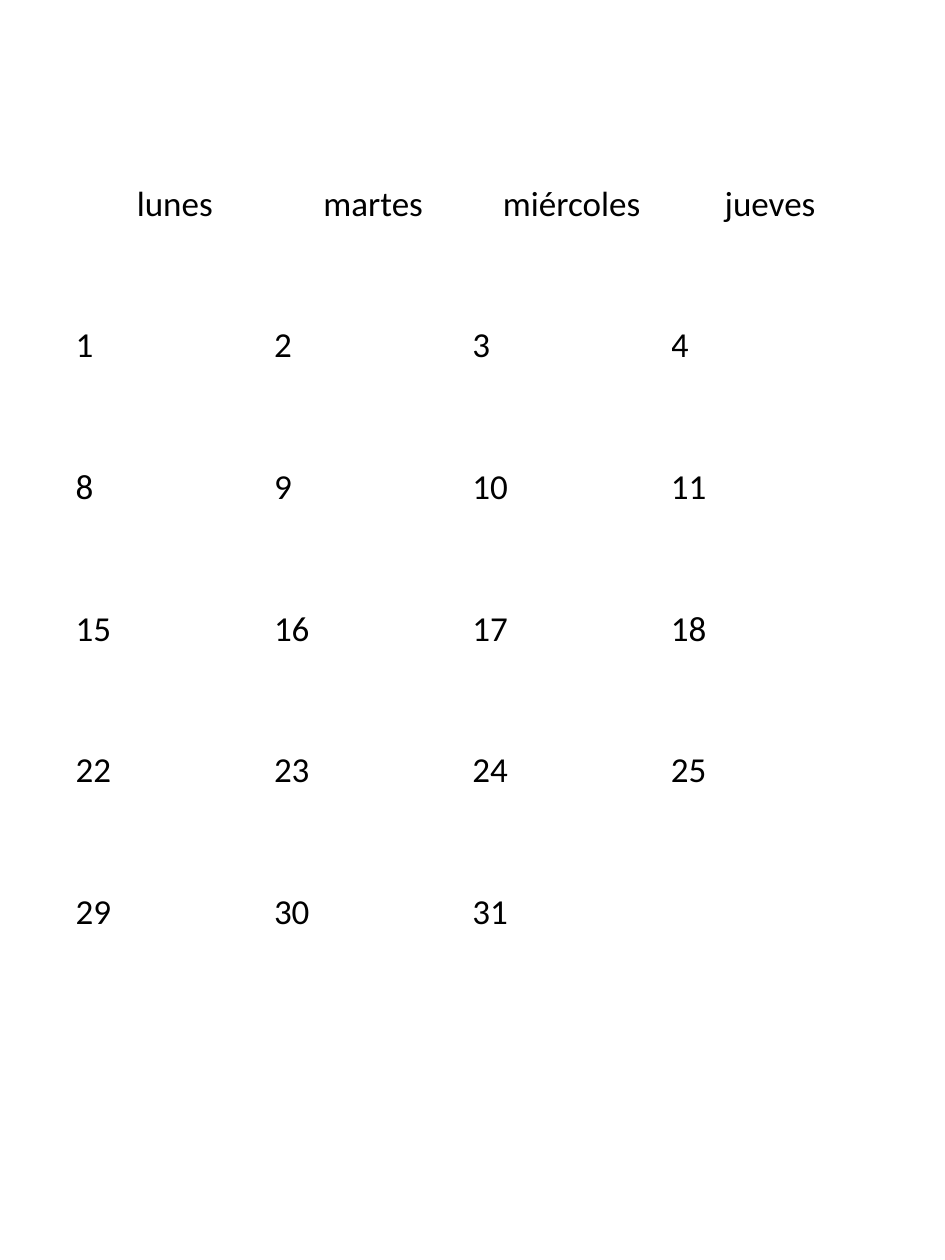
from dataclasses import dataclass

from pptx import Presentation
from pptx.dml.color import RGBColor
from pptx.enum import text
from pptx.util import Inches, Pt


@dataclass(frozen=True)
class Theme:
    font: str = "Calibri"
    size: int = 20
    ink: RGBColor = RGBColor(0, 0, 0)
    paper: RGBColor = RGBColor(255, 255, 255)


THEME = Theme()
WEEKDAYS = ["lunes", "martes", "miércoles", "jueves"]
WEEK_ROWS = 6
DAYS_IN_MONTH = 31


def write(tf, content, size=THEME.size, color=THEME.ink, align=text.PP_ALIGN.LEFT):
    p = tf.paragraphs[0]
    p.alignment = align
    r = p.add_run()
    r.text = content
    r.font.name = THEME.font
    r.font.size = Pt(size)
    r.font.bold = False
    r.font.color.rgb = color


def format_cell(cell):
    cell.fill.solid()
    cell.fill.fore_color.rgb = THEME.paper
    cell.vertical_anchor = text.MSO_ANCHOR.MIDDLE
    cell.margin_left = cell.margin_right = 0
    cell.margin_top = cell.margin_bottom = 0


def add_calendar(s, left, top, width, height):
    table = s.shapes.add_table(
        WEEK_ROWS + 1, len(WEEKDAYS), left, top, width, height
    ).table
    table.first_row = table.horz_banding = False
    for cell in table.iter_cells():
        format_cell(cell)
    for col, name in enumerate(WEEKDAYS):
        write(table.cell(0, col).text_frame, name, align=text.PP_ALIGN.CENTER)
        for week in range(WEEK_ROWS):
            day = 7 * week + col + 1
            if day <= DAYS_IN_MONTH:
                write(table.cell(week + 1, col).text_frame, str(day))


def main():
    prs = Presentation()
    prs.slide_width, prs.slide_height = Inches(7.5), Inches(10)
    s = prs.slides.add_slide(prs.slide_layouts[6])
    add_calendar(s, Inches(0.6), Inches(1.06), Inches(6.3), Inches(7.87))
    prs.save("out.pptx")


if __name__ == "__main__":
    main()
